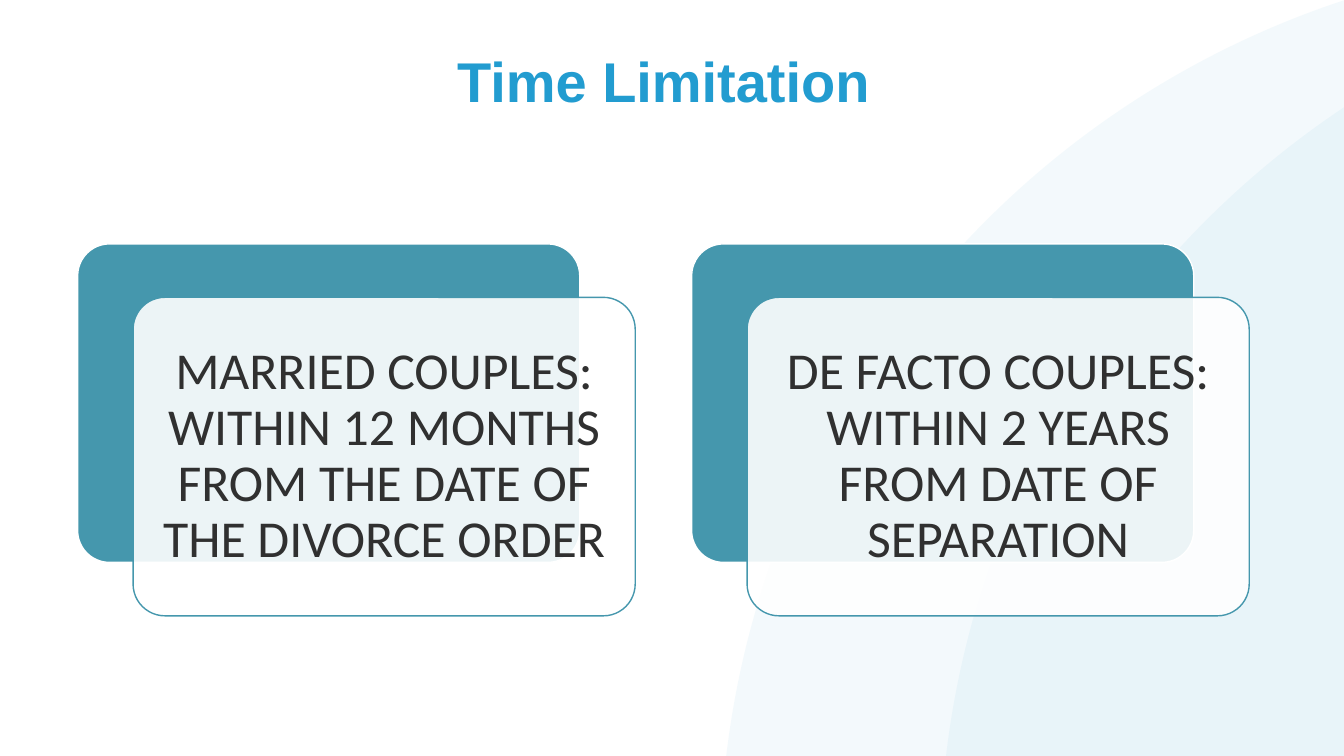
import pptx
import pptx.util
import pptx.dml.color
import pptx.enum.shapes
import pptx.enum.text
import lxml.etree
from dataclasses import dataclass

Inches = pptx.util.Inches
Pt = pptx.util.Pt
RGB = pptx.dml.color.RGBColor.from_string
SHAPE = pptx.enum.shapes.MSO_SHAPE
ANCHOR = pptx.enum.text.MSO_ANCHOR


@dataclass(frozen=True)
class Theme:
    blue: str = "229CD0"
    teal: str = "4597AD"
    white: str = "FFFFFF"
    ink: str = "303030"
    title_font: str = "Arial"
    body_font: str = "Calibri"
    title_size: int = 40
    body_size: int = 37


T = Theme()


def add_filled(s, kind, x, y, w, h, fill, line=None, alpha=100):
    sp = s.shapes.add_shape(kind, Inches(x), Inches(y), Inches(w), Inches(h))
    sp.shadow.inherit = False
    sp.fill.solid()
    sp.fill.fore_color.rgb = RGB(fill)
    if alpha < 100:
        clr = sp.fill._xPr.find(".//" + pptx.oxml.ns.qn("a:srgbClr"))
        lxml.etree.SubElement(clr, pptx.oxml.ns.qn("a:alpha"), val=str(alpha * 1000))
    if line:
        sp.line.color.rgb = RGB(line)
        sp.line.width = Pt(1)
    else:
        sp.line.fill.background()
    return sp


def set_text(tf, text, font, size, color, bold=False):
    tf.word_wrap = True
    tf.auto_size = pptx.enum.text.MSO_AUTO_SIZE.NONE
    tf.text = text
    p = tf.paragraphs[0]
    p.alignment = pptx.enum.text.PP_ALIGN.CENTER
    p.line_spacing = 0.9
    f = p.runs[0].font
    f.name, f.size, f.bold = font, Pt(size), bold
    f.color.rgb = RGB(color)


prs = pptx.Presentation()
prs.slide_width, prs.slide_height = Inches(13.33), Inches(7.5)
s = prs.slides.add_slide(prs.slide_layouts[5])
s.background.fill.solid()
s.background.fill.fore_color.rgb = RGB(T.white)

# Background arcs
for x in (7.14, 9.32):
    add_filled(s, SHAPE.OVAL, x, -0.45, 18.02, 18.02, T.blue, alpha=5)

# Title, brought in front of the arcs
title = s.shapes.title
title.left, title.top = Inches(0.77), Inches(0.49)
title.width, title.height = Inches(11.62), Inches(0.97)
title.text_frame.vertical_anchor = ANCHOR.TOP
set_text(title.text_frame, "Time Limitation", T.title_font, T.title_size, T.blue, bold=True)
title.element.getparent().append(title.element)

# Cards: a teal panel with a translucent text panel offset over it
LEFT, TOP, PITCH = 0.77, 2.42, 6.09
CARD_W, CARD_H = 4.98, 3.16
DX, DY = 0.55, 0.53
limits = [
    "MARRIED COUPLES: WITHIN 12 MONTHS FROM THE DATE OF THE DIVORCE ORDER",
    "DE FACTO COUPLES: WITHIN 2 YEARS FROM DATE OF SEPARATION",
]
for i, limit in enumerate(limits):
    x = LEFT + i * PITCH
    back = add_filled(s, SHAPE.ROUNDED_RECTANGLE, x, TOP, CARD_W, CARD_H, T.teal, T.white)
    front = add_filled(s, SHAPE.ROUNDED_RECTANGLE, x + DX, TOP + DY, CARD_W, CARD_H,
                       T.white, T.teal, alpha=90)
    back.adjustments[0] = front.adjustments[0] = 0.1
    tf = front.text_frame
    tf.margin_left = tf.margin_right = tf.margin_top = tf.margin_bottom = Inches(0.15)
    tf.vertical_anchor = ANCHOR.MIDDLE
    set_text(tf, limit, T.body_font, T.body_size, T.ink)

prs.save("out.pptx")
